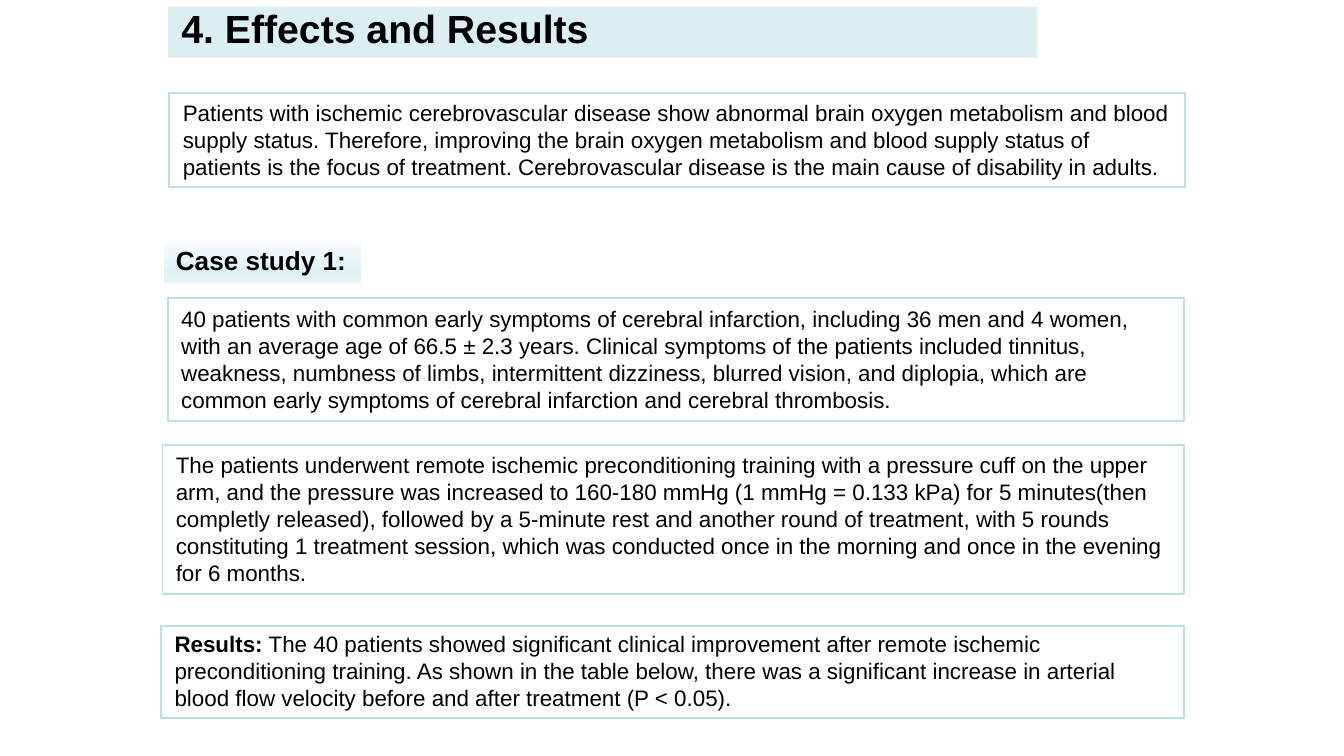
import pptx
import pptx.dml.color
import pptx.enum.shapes
import pptx.enum.text
import pptx.oxml
import pptx.oxml.ns
import pptx.util

Inches = pptx.util.Inches
RGB = pptx.dml.color.RGBColor
Anchor = pptx.enum.text.MSO_ANCHOR
qn = pptx.oxml.ns.qn

TEAL = RGB(0xBB, 0xE0, 0xE3)
WHITE = RGB(0xFF, 0xFF, 0xFF)
BLACK = RGB(0, 0, 0)
FADE = [(0, "FCFDFE"), (74, "E0F1F2"), (83, "E0F1F2"), (100, "EBF6F7")]

INTRO = (
    "Patients with ischemic cerebrovascular disease show abnormal brain oxygen "
    "metabolism and blood supply status. Therefore, improving the brain oxygen "
    "metabolism and blood supply status of patients is the focus of treatment. "
    "Cerebrovascular disease is the main cause of disability in adults.")
GROUP = (
    "40 patients with common early symptoms of cerebral infarction, including 36 men "
    "and 4 women, with an average age of 66.5 ± 2.3 years. Clinical symptoms of the "
    "patients included tinnitus, weakness, numbness of limbs, intermittent dizziness, "
    "blurred vision, and diplopia, which are common early symptoms of cerebral "
    "infarction and cerebral thrombosis.")
METHOD = (
    "The patients underwent remote ischemic preconditioning training with a pressure "
    "cuff on the upper arm, and the pressure was increased to 160-180 mmHg (1 mmHg = "
    "0.133 kPa) for 5 minutes(then completly released), followed by a 5-minute rest "
    "and another round of treatment, with 5 rounds constituting 1 treatment session, "
    "which was conducted once in the morning and once in the evening for 6 months.")
RESULT = (
    " The 40 patients showed significant clinical improvement after remote ischemic "
    "preconditioning training. As shown in the table below, there was a significant "
    "increase in arterial blood flow velocity before and after treatment (P < 0.05).")


def write(shape, text, lead="", size=12, bold=False, anchor=Anchor.TOP):
    """Fill a shape with one left-aligned paragraph, after an optional bold lead."""
    frame = shape.text_frame
    frame.word_wrap = True
    frame.auto_size = pptx.enum.text.MSO_AUTO_SIZE.NONE
    frame.vertical_anchor = anchor
    para = frame.paragraphs[0]
    para.alignment = pptx.enum.text.PP_ALIGN.LEFT
    para.space_before = pptx.util.Pt(0)
    for part, heavy in ((lead, True), (text, bold)):
        if part:
            run = para.add_run()
            run.text = part
            run.font.name = "Arial"
            run.font.size = pptx.util.Pt(size)
            run.font.bold = heavy
            run.font.color.rgb = BLACK


class Page:
    def __init__(self, deck):
        self.slide = deck.slides.add_slide(deck.slide_layouts[0])

    def place(self, shape, box):
        shape.left, shape.top, shape.width, shape.height = map(Inches, box)

    def frame(self, shape, line=TEAL):
        shape.fill.solid()
        shape.fill.fore_color.rgb = WHITE
        shape.line.color.rgb = line
        shape.line.width = pptx.util.Pt(1)

    def title(self, text, box):
        shape = self.slide.shapes.title
        self.place(shape, box)
        shape.fill.solid()
        shape.fill.fore_color.rgb = TEAL
        tint = shape.fill._xPr.find(".//" + qn("a:srgbClr"))
        tint.append(pptx.oxml.parse_xml(
            f'<a:alpha {pptx.oxml.ns.nsdecls("a")} val="51000"/>'))
        write(shape, text, size=21, bold=True, anchor=Anchor.BOTTOM)

    def body(self, text, box):
        shape = self.slide.placeholders[1]
        self.place(shape, box)
        self.frame(shape)
        write(shape, text)

    def panel(self, text, box, line=TEAL, **style):
        shape = self.slide.shapes.add_shape(
            pptx.enum.shapes.MSO_SHAPE.RECTANGLE, *map(Inches, box))
        shape.shadow.inherit = False
        self.frame(shape, line)
        write(shape, text, **style)
        return shape

    def label(self, text, box):
        shape = self.panel(text, box, line=WHITE, size=14, bold=True)
        shape.fill.gradient()
        shape.fill.gradient_angle = 270
        stops = shape.fill._xPr.find(".//" + qn("a:gsLst"))
        for stop in list(stops):
            stops.remove(stop)
        for at, tone in FADE:
            stops.append(pptx.oxml.parse_xml(
                f'<a:gs {pptx.oxml.ns.nsdecls("a")} pos="{at * 1000}">'
                f'<a:srgbClr val="{tone}"/></a:gs>'))


def main():
    deck = pptx.Presentation()
    deck.slide_width = Inches(10)
    deck.slide_height = deck.slide_width * 9 // 16
    page = Page(deck)
    page.title("4. Effects and Results", (1.25, 0.05, 6.47, 0.38))
    page.body(INTRO, (1.26, 0.69, 7.56, 0.7))
    page.panel(GROUP, (1.25, 2.22, 7.56, 0.91))
    page.label("Case study 1:", (1.21, 1.77, 1.48, 0.34))
    page.panel(METHOD, (1.21, 3.31, 7.6, 1.11))
    page.panel(RESULT, (1.2, 4.66, 7.61, 0.68), lead="Results:", anchor=Anchor.BOTTOM)
    deck.save("out.pptx")


if __name__ == "__main__":
    main()
